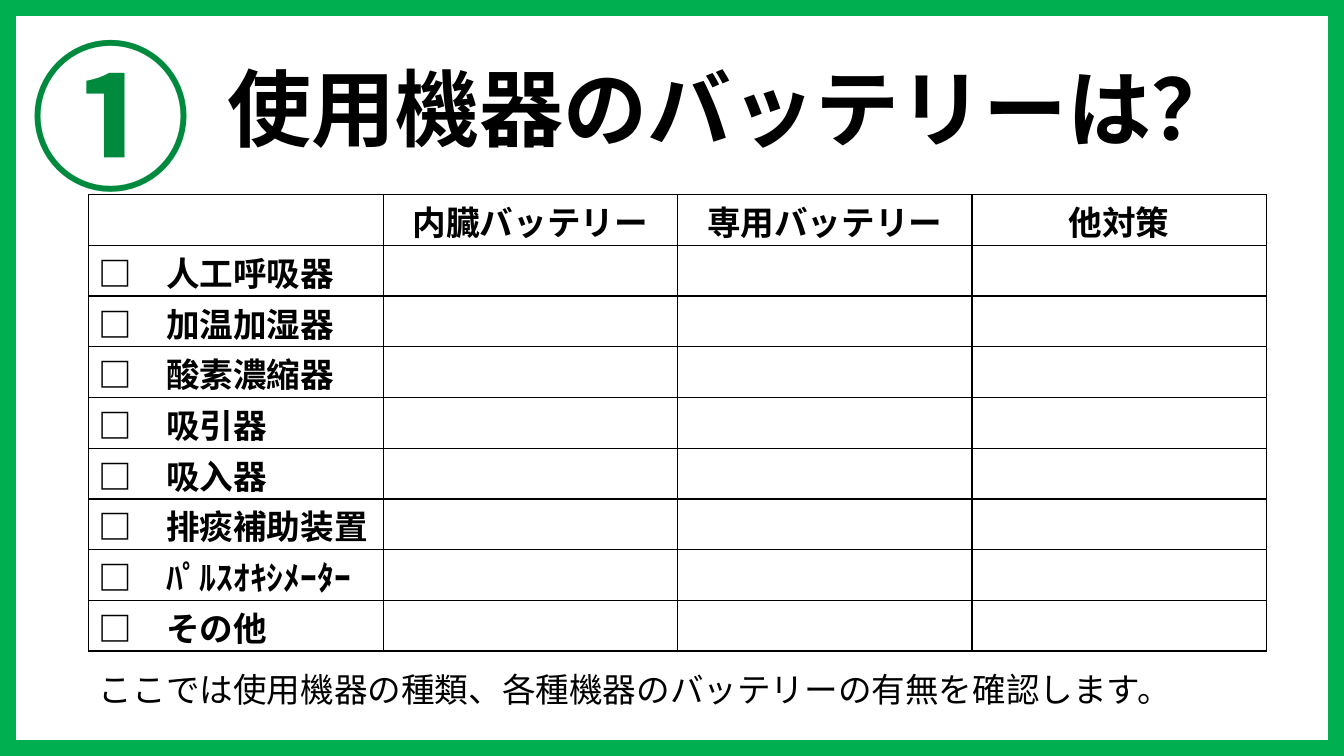
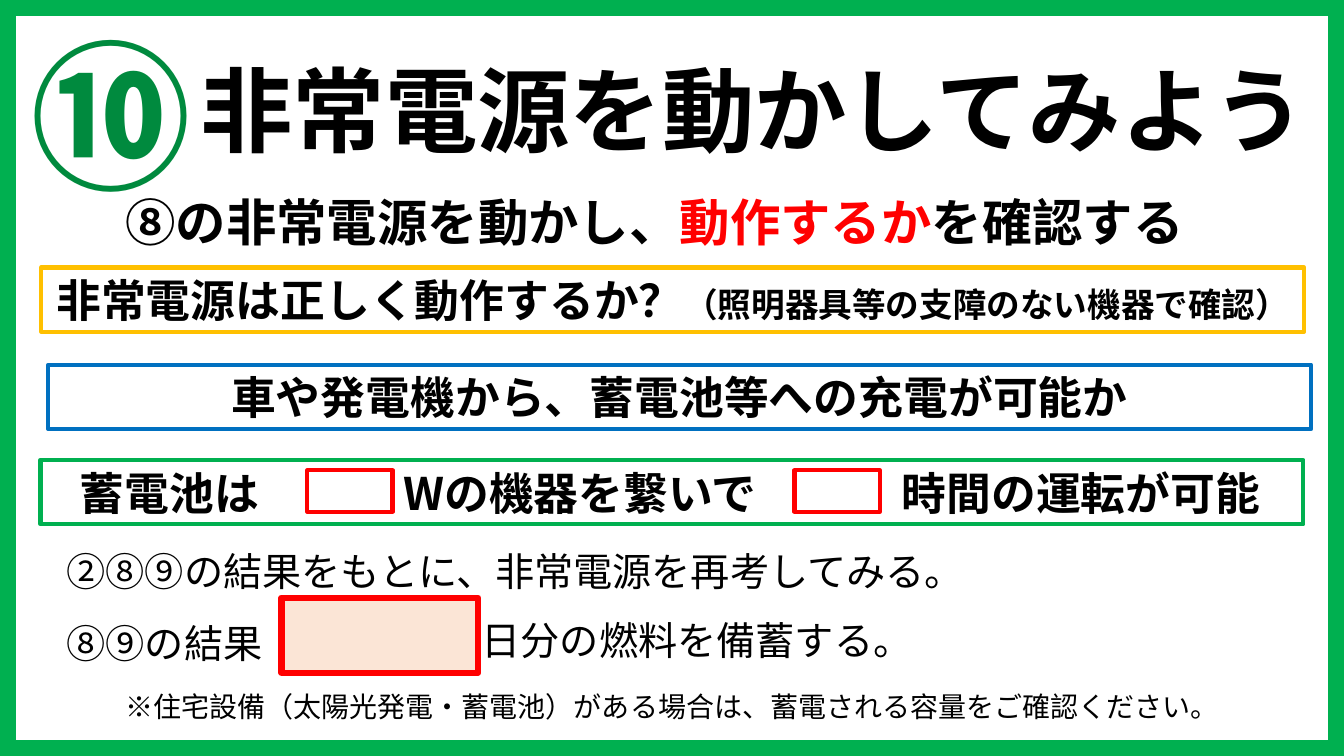
from dataclasses import dataclass
from typing import Optional

from lxml import etree
from pptx import Presentation
from pptx.dml.color import RGBColor
from pptx.enum import shapes, text
from pptx.oxml import ns
from pptx.util import Pt

COLORS = {
    "frame": "00B050",
    "number": "008A3E",
    "text": "000000",
    "red": "FF0000",
    "amber": "FFC000",
    "blue": "0070C0",
    "peach": "FBE5D6",
}
FONT = "Noto Sans CJK JP"
SLIDE_W, SLIDE_H = 960, 540
LEFT, CENTER = text.PP_ALIGN.LEFT, text.PP_ALIGN.CENTER


@dataclass
class Span:
    text: str
    color: Optional[str] = None
    size: Optional[float] = None


@dataclass
class Label:
    spans: list[Span]
    left: float
    top: float
    width: float
    height: float
    size: float
    bold: bool = False
    align: text.PP_ALIGN = LEFT


@dataclass
class Box:
    left: float
    top: float
    width: float
    height: float
    line: str
    weight: float = 3
    fill: Optional[str] = None


@dataclass
class Banner:
    box: Box
    spans: list[Span]
    tabs: tuple[float, ...] = ()
    inset: float = 7.2


def rgb(name: str) -> RGBColor:
    return RGBColor.from_string(COLORS[name])


def write(p, spans: list[Span], size: float, bold: bool = False,
          align: text.PP_ALIGN = LEFT, color: str = "text") -> None:
    p.alignment = align
    font = p.font
    font.size, font.bold, font.name = Pt(size), bold, FONT
    font.color.rgb = rgb(color)
    etree.SubElement(font._element, ns.qn("a:ea"), typeface=FONT)
    for span in spans:
        r = p.add_run()
        r.text = span.text
        if span.color:
            r.font.color.rgb = rgb(span.color)
        if span.size:
            r.font.size = Pt(span.size)


def add_label(s, label: Label, color: str = "text") -> None:
    sp = s.shapes.add_textbox(Pt(label.left), Pt(label.top),
                              Pt(label.width), Pt(label.height))
    tf = sp.text_frame
    tf.word_wrap = True
    write(tf.paragraphs[0], label.spans, label.size, label.bold, label.align, color)


def add_box(s, box: Box, kind=shapes.MSO_SHAPE.RECTANGLE):
    sp = s.shapes.add_shape(kind, Pt(box.left), Pt(box.top),
                            Pt(box.width), Pt(box.height))
    sp.shadow.inherit = False
    sp.line.color.rgb = rgb(box.line)
    sp.line.width = Pt(box.weight)
    if box.fill:
        sp.fill.solid()
        sp.fill.fore_color.rgb = rgb(box.fill)
    else:
        sp.fill.background()
    return sp


def add_banner(s, banner: Banner) -> None:
    """Draw an outlined line of text; tab stops leave room for blanks to fill in."""
    tf = add_box(s, banner.box).text_frame
    tf.word_wrap = True
    tf.vertical_anchor = text.MSO_ANCHOR.MIDDLE
    tf.margin_left = Pt(banner.inset)
    p = tf.paragraphs[0]
    write(p, banner.spans, 32, True, LEFT if banner.tabs else CENTER)
    if banner.tabs:
        stops = etree.Element(ns.qn("a:tabLst"))
        for pos in banner.tabs:
            etree.SubElement(stops, ns.qn("a:tab"), pos=str(Pt(pos)), algn="l")
        p._p.get_or_add_pPr().insert(0, stops)


def border_cell(cell) -> None:
    tcPr = cell._tc.get_or_add_tcPr()
    for i, side in enumerate(("lnL", "lnR", "lnT", "lnB")):
        ln = etree.Element(ns.qn(f"a:{side}"), w=str(Pt(1)))
        fill = etree.SubElement(ln, ns.qn("a:solidFill"))
        etree.SubElement(fill, ns.qn("a:srgbClr"), val=COLORS["text"])
        tcPr.insert(i, ln)


def add_checklist(s, headers: list[str], devices: list[str]) -> None:
    n_rows, n_cols = len(devices) + 1, len(headers) + 1
    col_w, row_h = 210.25, 36.25
    table = s.shapes.add_table(n_rows, n_cols, Pt(63.5), Pt(139),
                               Pt(col_w * n_cols), Pt(row_h * n_rows)).table
    for col in table.columns:
        col.width = Pt(col_w)
    for row in table.rows:
        row.height = Pt(row_h)
    rows = [["", *headers]] + [[f"□　{name}"] + [""] * len(headers) for name in devices]
    for i, row in enumerate(rows):
        for j, value in enumerate(row):
            cell = table.cell(i, j)
            cell.fill.background()
            cell.margin_top = cell.margin_bottom = 0
            cell.vertical_anchor = text.MSO_ANCHOR.BOTTOM
            border_cell(cell)
            if value:
                write(cell.text_frame.paragraphs[0], [Span(value)], 24, True,
                      LEFT if i else CENTER)


def add_step(prs, number: str, title: Label):
    """Add a slide with the green frame, circled step number and title."""
    s = prs.slides.add_slide(prs.slide_layouts[6])
    add_label(s, Label([Span(number)], -3, 8.5, 165, 147, 115, True, CENTER), "number")
    frame = add_box(s, Box(0, 0, SLIDE_W, SLIDE_H, "frame", 1, "frame"),
                    shapes.MSO_SHAPE.FRAME)
    frame.adjustments[0] = 0.02
    add_label(s, title)
    return s


def build_battery_slide(prs) -> None:
    s = add_step(prs, "①", Label([Span("使用機器のバッテリーは？")],
                                 155.5, 36.5, 749.5, 80, 60, True))
    add_checklist(
        s,
        ["内臓バッテリー", "専用バッテリー", "他対策"],
        ["人工呼吸器", "加温加湿器", "酸素濃縮器", "吸引器", "吸入器",
         "排痰補助装置", "ﾊﾟﾙｽｵｷｼﾒｰﾀｰ", "その他"],
    )
    add_label(s, Label([Span("ここでは使用機器の種類、各種機器のバッテリーの有無を確認します。")],
                       63.5, 474, 857, 36, 24))


def build_power_slide(prs) -> None:
    s = add_step(prs, "⑩", Label([Span("非常電源を動かしてみよう")],
                                 136, 34.5, 811, 87, 66, True))
    width, height = 902, 46
    banners = [
        Banner(Box(29.5, 191, width, height, "amber"),
               [Span("非常電源は正しく動作するか？"),
                Span("（照明器具等の支障のない機器で確認）", size=24)]),
        Banner(Box(34.5, 260.5, width, height, "blue"),
               [Span("車や発電機から、蓄電池等への充電が可能か")]),
        Banner(Box(29, 328.5, width, height, "frame"),
               [Span("蓄電池は\tWの機器を繋いで\t時間の運転が可能")], (231, 587), 28),
    ]
    for banner in banners:
        add_banner(s, banner)

    for left in (219.5, 567.5):
        add_box(s, Box(left, 336, 61, 29.5, "red"))
    add_box(s, Box(201, 427, 140.5, 53.5, "red", 4.5, "peach"))

    labels = [
        Label([Span("⑧の非常電源を動かし、"), Span("動作するか", "red"), Span("を確認する")],
              17.5, 133, 900, 51, 36, True, CENTER),
        Label([Span("②⑧⑨の結果をもとに、非常電源を再考してみる。")], 40.5, 387.5, 890.5, 41, 28),
        Label([Span("⑧⑨の結果")], 40.5, 439, 192, 41, 28),
        Label([Span("日分の燃料を備蓄する。")], 337, 437, 317.5, 41, 28),
        Label([Span("※住宅設備（太陽光発電・蓄電池）がある場合は、蓄電される容量をご確認ください。")],
              44, 489, 872.5, 31.5, 20, align=CENTER),
    ]
    for label in labels:
        add_label(s, label)


def main() -> None:
    prs = Presentation()
    prs.slide_width, prs.slide_height = Pt(SLIDE_W), Pt(SLIDE_H)
    build_battery_slide(prs)
    build_power_slide(prs)
    prs.save("out.pptx")


if __name__ == "__main__":
    main()
